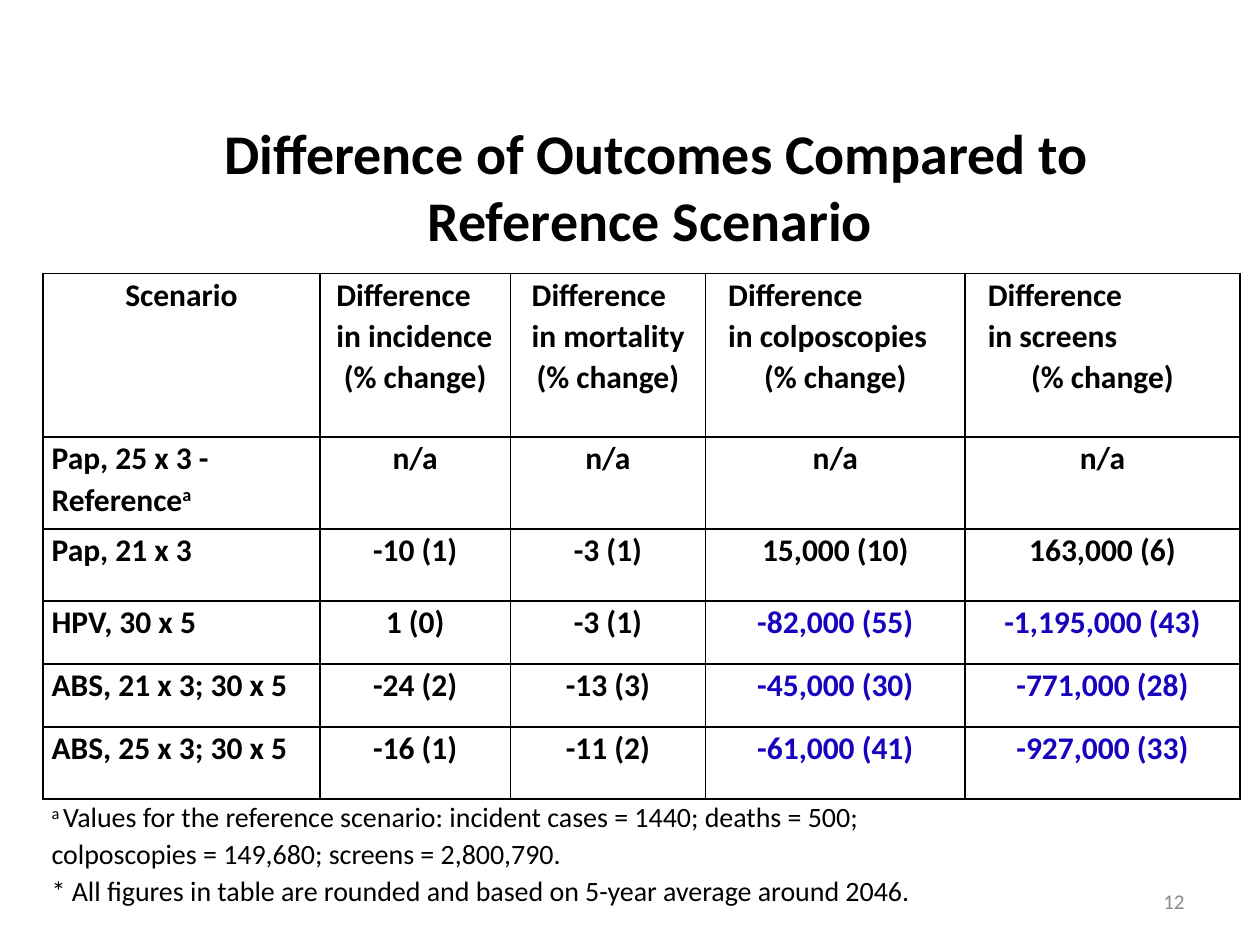
"""Build the slide comparing screening outcomes with the reference scenario."""
from lxml import etree
from pptx import Presentation
from pptx.dml.color import RGBColor
from pptx.enum.text import MSO_ANCHOR, PP_ALIGN
from pptx.oxml.ns import qn
from pptx.util import Inches, Pt

LEFT, MID, RIGHT = PP_ALIGN.LEFT, PP_ALIGN.CENTER, PP_ALIGN.RIGHT
CENTER = MSO_ANCHOR.MIDDLE
BLACK, BLUE, GRAY = "000000", "1802BE", "8C8C8C"

TITLE = "Difference of Outcomes Compared to Reference Scenario "
HEADS = ["incidence", "mortality", "colposcopies", "screens"]
ROWS = [
    ["Pap, 25 x 3 - Reference", "n/a", "n/a", "n/a", "n/a"],
    ["Pap, 21 x 3", "-10 (1)", "-3 (1)", "15,000 (10)", "163,000 (6)"],
    ["HPV, 30 x 5", "1 (0)", "-3 (1)", "-82,000 (55)", "-1,195,000 (43)"],
    ["ABS, 21 x 3; 30 x 5", "-24 (2)", "-13 (3)", "-45,000 (30)", "-771,000 (28)"],
    ["ABS, 25 x 3; 30 x 5", "-16 (1)", "-11 (2)", "-61,000 (41)", "-927,000 (33)"],
]
NOTES = [
    "Values for the reference scenario: incident cases = 1440; deaths = 500; ",
    "colposcopies = 149,680; screens = 2,800,790.",
    "* All figures in table are rounded and based on 5-year average around 2046.",
]
WIDTHS = [2.2, 1.51, 1.55, 2.06, 2.18]
HEIGHTS = [0.33, 1.3, 0.73, 0.57, 0.5, 0.5, 0.57, 0.86]
INDENTS = [0.06, 0.1, 0.11, 0.11]


def color(font, code):
    font.color.rgb = RGBColor.from_string(code)


def add_run(para, text, size=18, code=BLACK, bold=True, base=0):
    run = para.add_run()
    run.text = text
    font = run.font
    font.name, font.size, font.bold = "Calibri", Pt(size), bold
    color(font, code)
    if base:
        font._element.set("baseline", str(base * 1000))


def add_para(frame, align, first=False, indent=0):
    para = frame.paragraphs[0] if first else frame.add_paragraph()
    para.alignment, para.line_spacing = align, 1.07
    if indent:
        para._p.get_or_add_pPr().set("marL", str(Inches(indent)))
    return para


def style(cell, sides):
    cell.margin_left = cell.margin_right = Inches(0.07)
    cell.margin_top = cell.margin_bottom = 0
    props = cell._tc.get_or_add_tcPr()
    for side in "LRTB":
        line = etree.SubElement(props, qn("a:ln" + side), w=str(Pt(1)))
        if side in sides:
            fill = etree.SubElement(line, qn("a:solidFill"))
            etree.SubElement(fill, qn("a:srgbClr"), val=BLACK)
        else:
            etree.SubElement(line, qn("a:noFill"))
    cell.fill.background()


def place(shape, left, top, width, height):
    shape.left, shape.top = Inches(left), Inches(top)
    shape.width, shape.height = Inches(width), Inches(height)


def add_grid(slide):
    frame = slide.shapes.add_table(
        len(HEIGHTS), len(WIDTHS), Inches(0.34), Inches(1.84),
        Inches(sum(WIDTHS)), Inches(sum(HEIGHTS)))
    grid = frame.table
    grid.first_row = grid.horz_banding = False
    for col, width in zip(grid.columns, WIDTHS):
        col.width = Inches(width)
    last = len(HEIGHTS) - 1
    edges = {0: "B", last: "T"}
    for i, height in enumerate(HEIGHTS):
        grid.rows[i].height = Inches(height)
        for cell in grid.rows[i].cells:
            style(cell, edges.get(i, "LRTB"))
    for i in edges:
        grid.cell(i, 0).merge(grid.cell(i, len(WIDTHS) - 1))
    add_para(grid.cell(0, 0).text_frame, MID, True)
    return grid


def fill_heads(grid):
    add_run(add_para(grid.cell(1, 0).text_frame, MID, True), "Scenario")
    for j, (name, indent) in enumerate(zip(HEADS, INDENTS), 1):
        frame = grid.cell(1, j).text_frame
        add_run(add_para(frame, LEFT, True, indent), "Difference")
        add_run(add_para(frame, LEFT, indent=indent), "in " + name)
        add_run(add_para(frame, MID), "(% change)")


def fill_rows(grid):
    for i, row in enumerate(ROWS):
        for j, text in enumerate(row):
            para = add_para(grid.cell(i + 2, j).text_frame, MID if j else LEFT, True)
            add_run(para, text, code=BLUE if i > 1 and j > 2 else BLACK)
            if i == j == 0:
                add_run(para, "a", base=30)


def fill_notes(grid):
    frame = grid.cell(len(HEIGHTS) - 1, 0).text_frame
    para = add_para(frame, LEFT, True)
    add_run(para, "a ", 16, bold=False, base=30)
    add_run(para, NOTES[0], 16, bold=False)
    para.add_line_break()
    add_run(para, NOTES[1], 16, bold=False)
    add_run(add_para(frame, LEFT), NOTES[2], 16, bold=False)


def main():
    deck = Presentation()
    deck.slide_width, deck.slide_height = Inches(10), Inches(7.5)
    slide = deck.slides.add_slide(deck.slide_layouts[5])

    title = slide.shapes.title
    place(title, 0.71, 0.85, 9, 1.25)
    title.text_frame.vertical_anchor = CENTER
    para = title.text_frame.paragraphs[0]
    para.alignment = MID
    add_run(para, TITLE, 32)

    grid = add_grid(slide)
    fill_heads(grid)
    fill_rows(grid)
    fill_notes(grid)

    page = slide.shapes.add_textbox(
        Inches(7.17), Inches(6.95), Inches(2.33), Inches(0.4)).text_frame
    page.word_wrap, page.vertical_anchor = True, CENTER
    para = page.paragraphs[0]
    para.alignment = RIGHT
    add_run(para, "12", 12, GRAY, False)
    deck.save("out.pptx")


if __name__ == "__main__":
    main()
